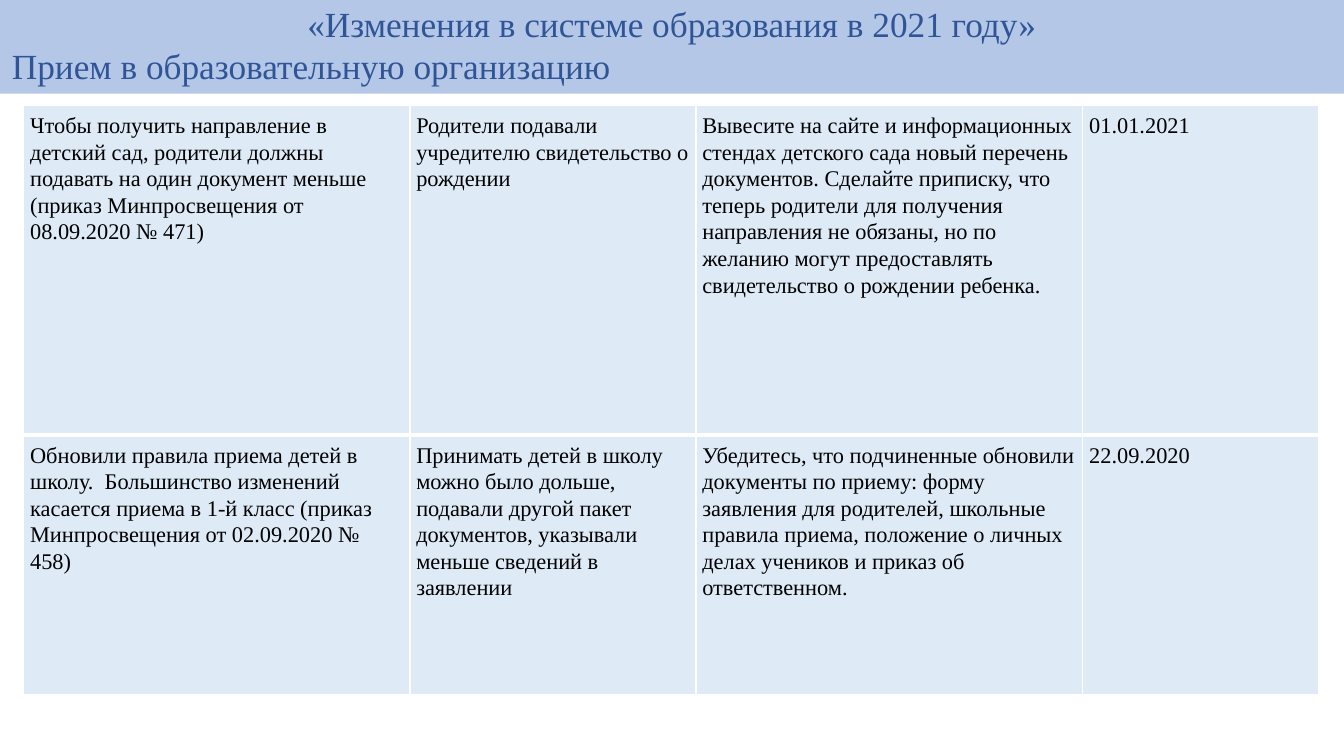
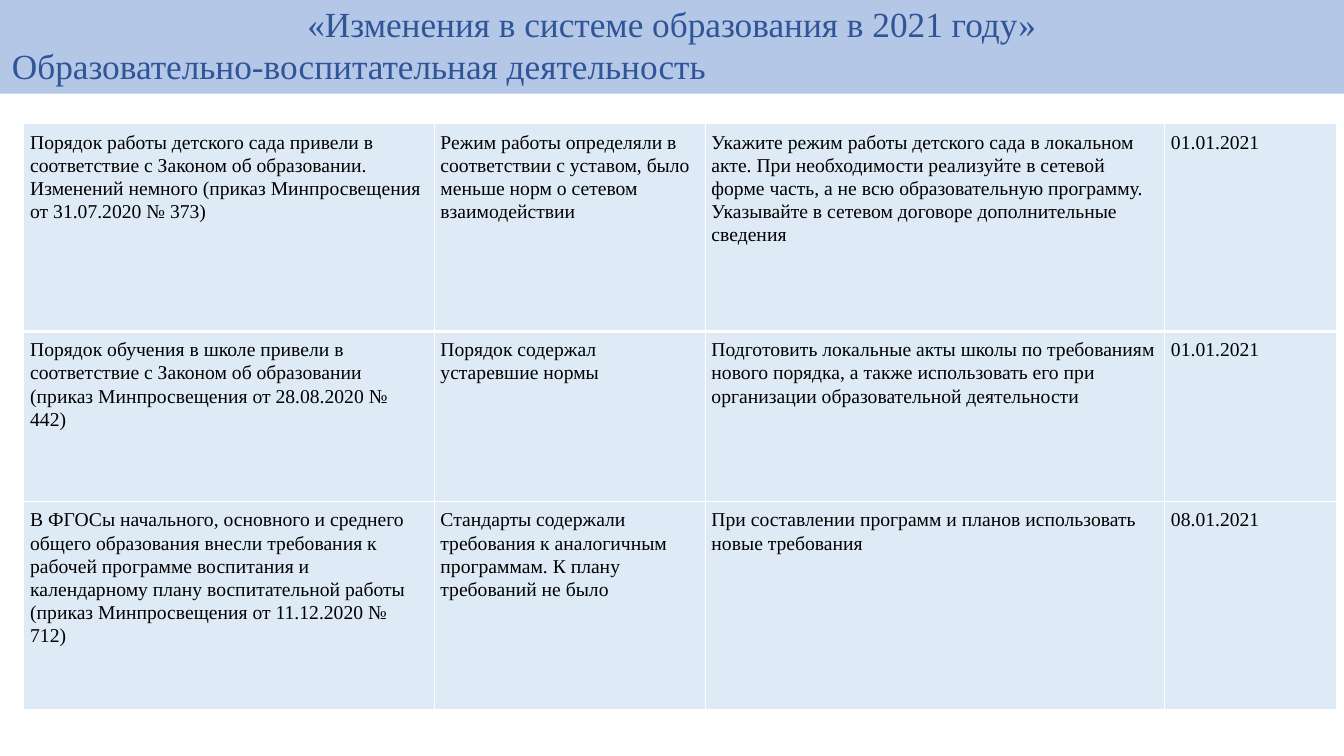
from lxml import etree
from pptx import Presentation
from pptx.dml.color import RGBColor
from pptx.enum.text import MSO_ANCHOR, MSO_AUTO_SIZE, PP_ALIGN
from pptx.oxml.ns import qn
from pptx.util import Cm, Pt

CENTER, LEFT = PP_ALIGN.CENTER, PP_ALIGN.LEFT
TOP, MIDDLE = MSO_ANCHOR.TOP, MSO_ANCHOR.MIDDLE
NO_AUTOFIT = MSO_AUTO_SIZE.NONE

COLORS = {
    "band": "B4C7E7",
    "heading": "2F5597",
    "cell": "DEEBF7",
    "text": "000000",
    "border": "FFFFFF",
}
FONT = "Times New Roman"
SLIDE_WIDTH, SLIDE_HEIGHT = Cm(33.87), Cm(19.05)
BAND_BOX = (Cm(0), Cm(-0.13), SLIDE_WIDTH, Cm(2.49))
BAND_FRAME = {
    "auto_size": NO_AUTOFIT,
    "vertical_anchor": MIDDLE,
    "word_wrap": True,
    "margin_left": Cm(0.3),
    "margin_right": Cm(0.3),
}
HEADING_SPACING = {"line_spacing": Pt(30), "space_before": Pt(0), "space_after": Pt(0)}
CELL_FRAME = {
    "vertical_anchor": TOP,
    "margin_left": Cm(0.16),
    "margin_right": Cm(0.16),
    "margin_top": Cm(0.16),
    "margin_bottom": Cm(0.16),
}
CELL_SPACING = {"alignment": LEFT, "line_spacing": 1.07, "space_after": Pt(6)}
TABLE_LEFT = Cm(0.6)
THIN, THICK = Pt(1), Pt(3)

DECK_TITLE = "«Изменения в системе образования в 2021 году»"
SECTIONS = [
    {
        "topic": "Прием в образовательную организацию",
        "top": 2.66,
        "size": 16,
        "widths": [9.73, 7.21, 9.75, 5.94],
        "heights": [8.3, 6.55],
        "changes": [
            (
                "Чтобы получить направление в детский сад, родители должны подавать "
                "на один документ меньше (приказ Минпросвещения от 08.09.2020 № 471)",
                "Родители подавали учредителю свидетельство о рождении",
                "Вывесите на сайте и информационных стендах детского сада новый "
                "перечень документов. Сделайте приписку, что теперь родители для "
                "получения направления не обязаны, но по желанию могут предоставлять "
                "свидетельство о рождении ребенка.",
                "01.01.2021",
            ),
            (
                "Обновили правила приема детей в школу.  Большинство изменений "
                "касается приема в 1-й класс (приказ Минпросвещения от 02.09.2020 № 458)",
                "Принимать детей в школу можно было дольше, подавали другой пакет "
                "документов, указывали меньше сведений в заявлении",
                "Убедитесь, что подчиненные обновили документы по приему: форму "
                "заявления для родителей, школьные правила приема, положение о личных "
                "делах учеников и приказ об ответственном.",
                "22.09.2020",
            ),
        ],
    },
    {
        "topic": "Образовательно-воспитательная деятельность",
        "top": 3.12,
        "size": 14,
        "widths": [10.34, 6.83, 11.58, 4.34],
        "heights": [5.23, 4.29, 5.23],
        "changes": [
            (
                "Порядок работы детского сада привели в соответствие с Законом об "
                "образовании. Изменений немного (приказ Минпросвещения от 31.07.2020 № 373)",
                "Режим работы определяли в соответствии с уставом, было меньше норм "
                "о сетевом взаимодействии",
                "Укажите режим работы детского сада в локальном акте. При необходимости "
                "реализуйте в сетевой форме часть, а не всю образовательную программу. "
                "Указывайте в сетевом договоре дополнительные сведения",
                "01.01.2021",
            ),
            (
                "Порядок обучения в школе привели в соответствие с Законом об "
                "образовании (приказ Минпросвещения от 28.08.2020 № 442)",
                "Порядок содержал устаревшие нормы",
                "Подготовить локальные акты школы по требованиям нового порядка, а "
                "также использовать его при организации образовательной деятельности",
                "01.01.2021",
            ),
            (
                "В ФГОСы начального, основного и среднего общего образования внесли "
                "требования к рабочей программе воспитания и календарному плану "
                "воспитательной работы (приказ Минпросвещения от 11.12.2020 № 712)",
                "Стандарты содержали требования к аналогичным программам. К плану "
                "требований не было",
                "При составлении программ и планов использовать новые требования",
                "08.01.2021",
            ),
        ],
    },
]


def apply_format(target, values):
    for name, value in values.items():
        setattr(target, name, value)


def fill_solid(target, color):
    target.fill.solid()
    target.fill.fore_color.rgb = RGBColor.from_string(COLORS[color])


def write_paragraph(paragraph, text, size, color, spacing):
    run = paragraph.add_run()
    run.text = text
    apply_format(run.font, {"name": FONT, "size": Pt(size), "bold": False})
    run.font.color.rgb = RGBColor.from_string(COLORS[color])
    apply_format(paragraph, spacing)


def set_borders(cell, widths):
    """Draw the cell's edges; widths follow the order left, right, top, bottom."""
    properties = cell._tc.get_or_add_tcPr()
    for position, (edge, width) in enumerate(zip("LRTB", widths)):
        line = etree.Element(qn(f"a:ln{edge}"), w=str(width))
        fill = etree.SubElement(line, qn("a:solidFill"))
        etree.SubElement(fill, qn("a:srgbClr"), val=COLORS["border"])
        properties.insert(position, line)


def add_title_band(slide, box, topic):
    band = slide.shapes.title
    apply_format(band, dict(zip(("left", "top", "width", "height"), box)))
    fill_solid(band, "band")
    frame = band.text_frame
    apply_format(frame, BAND_FRAME)
    headings = [
        (frame.paragraphs[0], DECK_TITLE, CENTER),
        (frame.add_paragraph(), topic, LEFT),
    ]
    for paragraph, text, alignment in headings:
        write_paragraph(paragraph, text, 25.2, "heading",
                        {**HEADING_SPACING, "alignment": alignment})


def add_changes_table(slide, left, top, section):
    widths = [Cm(width) for width in section["widths"]]
    heights = [Cm(height) for height in section["heights"]]
    table = slide.shapes.add_table(
        len(heights), len(widths), left, top, sum(widths), sum(heights)
    ).table
    apply_format(table, {"first_row": False, "horz_banding": False})
    for column, width in zip(table.columns, widths):
        column.width = width
    for index, (row, height, change) in enumerate(
        zip(table.rows, heights, section["changes"])
    ):
        row.height = height
        upper = THICK if index == 1 else THIN
        lower = THICK if index == 0 else THIN
        for cell, text in zip(row.cells, change):
            apply_format(cell, CELL_FRAME)
            fill_solid(cell, "cell")
            set_borders(cell, (THIN, THIN, upper, lower))
            write_paragraph(cell.text_frame.paragraphs[0], text,
                            section["size"], "text", CELL_SPACING)


def add_section_slide(deck, section):
    slide = deck.slides.add_slide(deck.slide_layouts.get_by_name("Title Only"))
    add_title_band(slide, BAND_BOX, section["topic"])
    add_changes_table(slide, TABLE_LEFT, Cm(section["top"]), section)


def main():
    deck = Presentation()
    apply_format(deck, {"slide_width": SLIDE_WIDTH, "slide_height": SLIDE_HEIGHT})
    for section in SECTIONS:
        add_section_slide(deck, section)
    deck.save("out.pptx")


if __name__ == "__main__":
    main()
